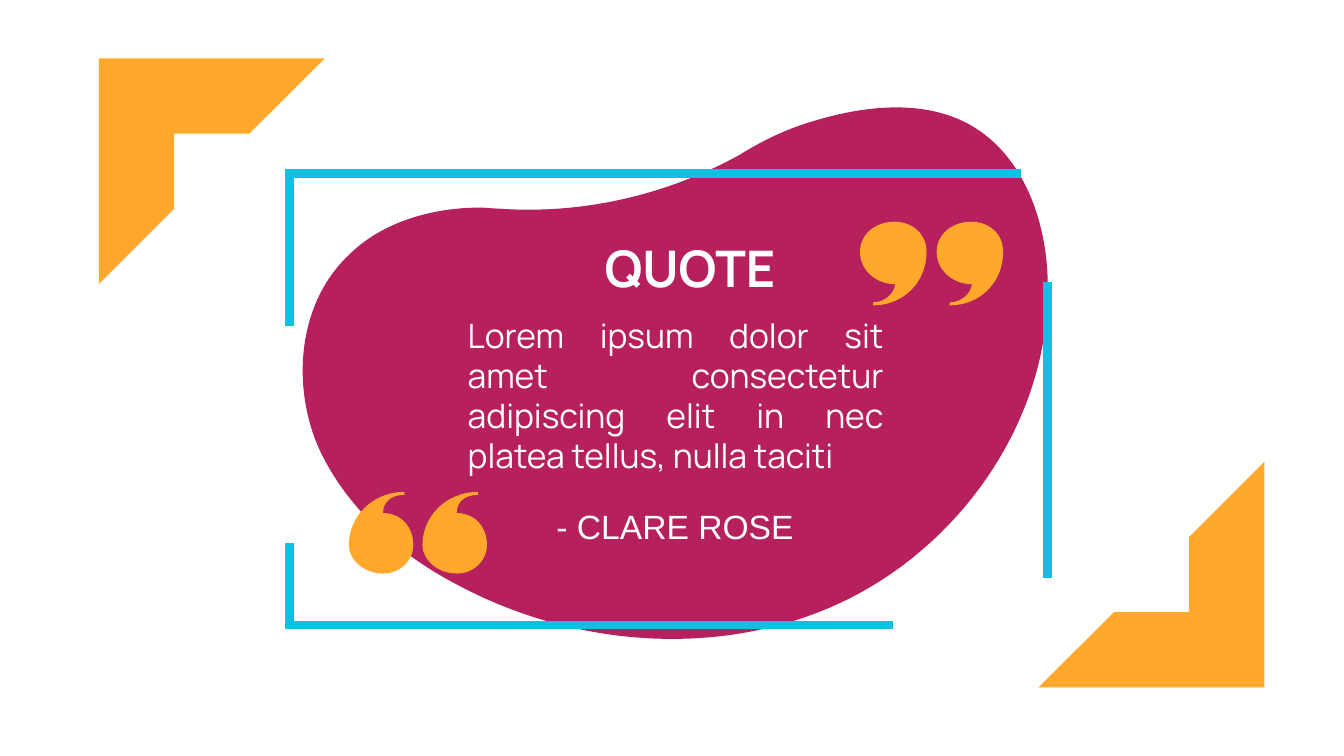
import pptx
import pptx.util
import pptx.dml.color
import pptx.enum.shapes
import pptx.enum.text
import pptx.oxml.ns
from lxml import etree

THEME = {
    "orange": "FFA82C", "berry": "B5205D", "cyan": "12BFE2", "white": "FFFFFF",
    "title": 36, "body": 24, "line": 6, "display": "Manrope", "plain": "Arial",
}
UNIT = pptx.util.Inches(0.01)
SLIDE_W, SLIDE_H = 1333, 750

TEXTS = [
    ("QUOTE", (548, 230, 273, 71), "title", "display", True, "CENTER"),
    ("Lorem ipsum dolor sit amet consectetur adipiscing elit in nec platea tellus, nulla taciti",
     (454, 307, 432, 172), "body", "display", False, "JUSTIFY"),
    ("- CLARE ROSE", (533, 497, 273, 50), "body", "plain", False, "CENTER"),
]
CORNER_SIZE = 224
CORNERS = [(98, 58, 0), (1030, 458, 180)]
FRAME_RIGHT = [(1039, 280), (1039, 573)]
FRAME_LINES = [
    [(886, 620), (287, 620), (287, 539)],
    [(287, 323), (287, 172), (1013, 172)],
]
BLOB = [
    (1039, 275),
    (1037, 218), (1015, 155), (964, 125),
    (916, 97), (854, 105), (801, 122),
    (781, 128), (757, 139), (733, 154),
    (660, 194), (577, 213), (494, 207),
    (488, 207), (482, 206), (476, 206),
    (429, 206), (379, 220), (346, 253),
    (296, 300), (289, 380), (315, 442),
    (343, 505), (398, 552), (457, 582),
    (575, 644), (722, 653), (840, 595),
    (959, 536), (1044, 409), (1039, 275),
]
OPEN_MARK = [
    (34, 21),
    (34, 9), (43, 3), (55, 3),
    (55, 0), (55, 0), (55, 0),
    (24, 0), (0, 24), (0, 53),
    (0, 67), (15, 81), (34, 81),
    (52, 81), (64, 67), (64, 53),
    (64, 35), (52, 21), (34, 21),
]
CLOSE_MARK = [
    (35, 62),
    (34, 71), (25, 80), (13, 80),
    (13, 83), (13, 83), (13, 83),
    (43, 83), (66, 60), (66, 30),
    (66, 12), (52, 0), (34, 0),
    (16, 0), (0, 12), (0, 30),
    (0, 48), (16, 62), (35, 62),
]
MARKS = [(OPEN_MARK, (346, 419), 488), (CLOSE_MARK, (929, 853), 220)]


def color(name):
    return pptx.dml.color.RGBColor.from_string(THEME[name])


def lengths(values):
    return [v * UNIT for v in values]


def paint(sp, name):
    sp.shadow.inherit = False
    sp.fill.solid()
    sp.fill.fore_color.rgb = color(name)
    sp.line.fill.background()


def stroke(sp):
    sp.line.color.rgb = color("cyan")
    sp.line.width = pptx.util.Pt(THEME["line"])


def outline(shapes, points, close):
    builder = shapes.build_freeform(*points[0], scale=UNIT)
    builder.add_line_segments(points[1:], close=close)
    sp = builder.convert_to_shape()
    sp.shadow.inherit = False
    return sp


def add_curve(shapes, points, name):
    sp = outline(shapes, points, True)
    qn = pptx.oxml.ns.qn
    segments = list(sp._element.iter(qn("a:lnTo")))
    for i in range(0, len(segments), 3):
        curve = etree.Element(qn("a:cubicBezTo"))
        segments[i].addprevious(curve)
        for segment in segments[i:i + 3]:
            curve.append(segment[0])
            segment.getparent().remove(segment)
    paint(sp, name)


def add_frame(shapes):
    start, end = FRAME_RIGHT
    straight = pptx.enum.shapes.MSO_CONNECTOR.STRAIGHT
    cx = shapes.add_connector(straight, *lengths(start + end))
    stroke(cx)
    etree.SubElement(cx._element.spPr, pptx.oxml.ns.qn("a:effectLst"))
    for points in FRAME_LINES:
        sp = outline(shapes, points, False)
        sp.fill.background()
        stroke(sp)
        miter = etree.SubElement(sp.line._get_or_add_ln(), pptx.oxml.ns.qn("a:miter"))
        miter.set("lim", "800000")


def add_text(shapes, text, box, size, font, bold, align):
    tf = shapes.add_textbox(*lengths(box)).text_frame
    tf.word_wrap = True
    tf.auto_size = pptx.enum.text.MSO_AUTO_SIZE.SHAPE_TO_FIT_TEXT
    tf.text = text
    p = tf.paragraphs[0]
    p.alignment = getattr(pptx.enum.text.PP_ALIGN, align)
    r = p.runs[0]
    r.font.name = THEME[font]
    r.font.size = pptx.util.Pt(THEME[size])
    r.font.bold = bold
    r.font.color.rgb = color("white")


def main():
    prs = pptx.Presentation()
    prs.slide_width, prs.slide_height = lengths((SLIDE_W, SLIDE_H))
    shapes = prs.slides.add_slide(prs.slide_layouts[6]).shapes

    half_frame = pptx.enum.shapes.MSO_SHAPE.HALF_FRAME
    for left, top, turn in CORNERS:
        sp = shapes.add_shape(half_frame, *lengths((left, top, CORNER_SIZE, CORNER_SIZE)))
        sp.rotation = turn
        paint(sp, "orange")

    add_curve(shapes, BLOB, "berry")
    add_frame(shapes.add_group_shape().shapes)
    for row in TEXTS:
        add_text(shapes, *row)
    for mark, lefts, top in MARKS:
        group = shapes.add_group_shape()
        for left in lefts:
            add_curve(group.shapes, [(left + x, top + y) for x, y in mark], "orange")

    prs.save("out.pptx")


if __name__ == "__main__":
    main()
